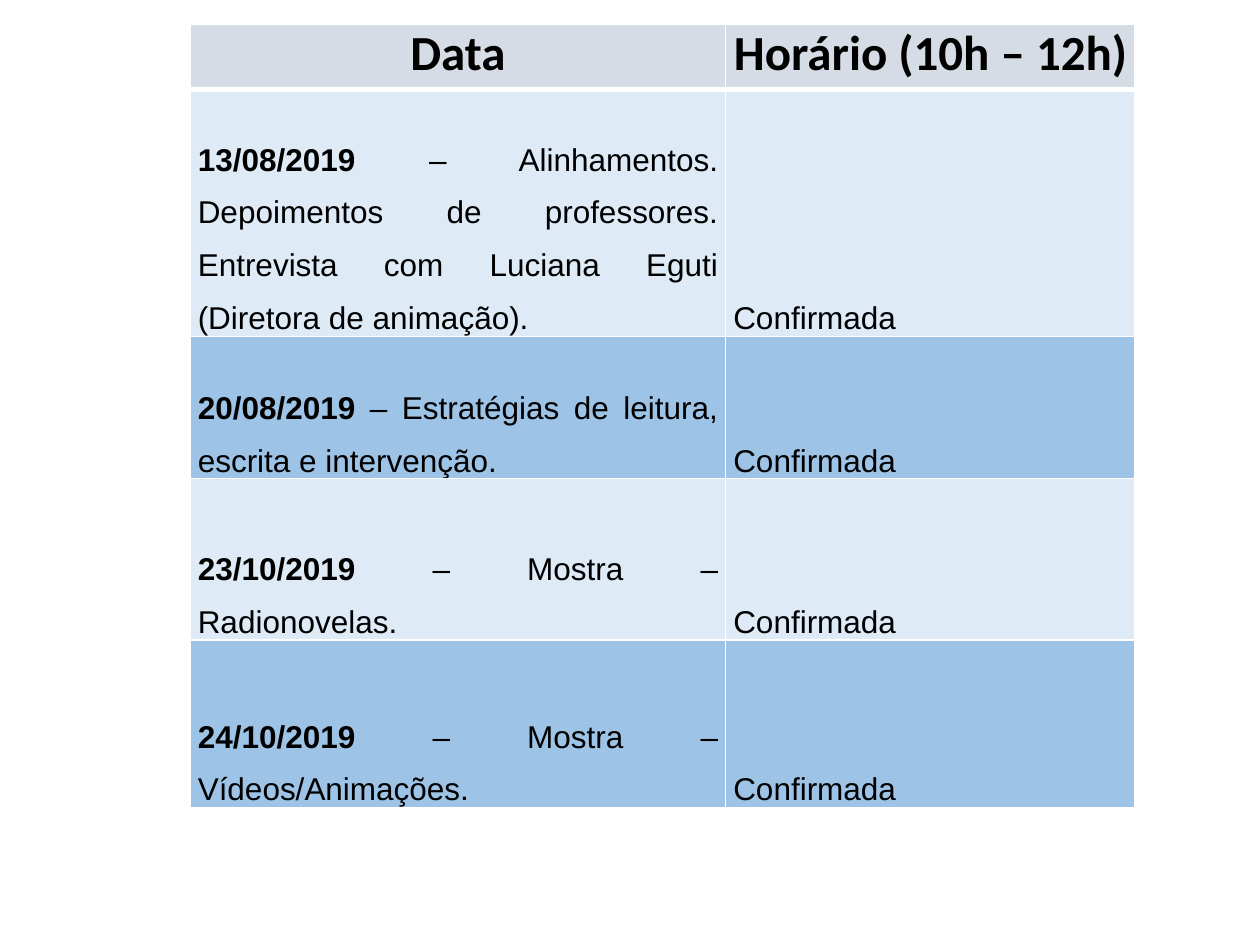
from dataclasses import dataclass

from lxml import etree
from pptx import Presentation
from pptx.dml.color import RGBColor
from pptx.enum.text import MSO_ANCHOR, PP_ALIGN
from pptx.oxml.ns import qn
from pptx.util import Inches, Pt

CENTER, JUSTIFY = PP_ALIGN.CENTER, PP_ALIGN.JUSTIFY
TOP, BOTTOM = MSO_ANCHOR.TOP, MSO_ANCHOR.BOTTOM


@dataclass(frozen=True)
class Theme:
    text: str = "000000"
    border: str = "FFFFFF"
    header_fill: str = "D6DCE5"
    light_fill: str = "DEEBF7"
    dark_fill: str = "9DC3E6"
    header_font: str = "Calibri"
    body_font: str = "Arial"
    header_size: int = 28
    body_size: int = 18
    thin: int = 1
    thick: int = 3


theme = Theme()


def set_borders(cell, top, bottom):
    widths = {"a:lnL": theme.thin, "a:lnR": theme.thin, "a:lnT": top, "a:lnB": bottom}
    properties = cell._tc.get_or_add_tcPr()
    for position, (side, width) in enumerate(widths.items()):
        line = etree.Element(qn(side), w=str(Pt(width)))
        fill = etree.SubElement(line, qn("a:solidFill"))
        etree.SubElement(fill, qn("a:srgbClr"), val=theme.border)
        properties.insert(position, line)


def fill_cell(cell, color, runs, font, size, alignment, spacing):
    cell.fill.solid()
    cell.fill.fore_color.rgb = RGBColor.from_string(color)
    cell.margin_left = cell.margin_right = Inches(0.06)
    cell.margin_bottom = Inches(0)
    paragraph = cell.text_frame.paragraphs[0]
    paragraph.alignment = alignment
    paragraph.line_spacing = spacing
    for text, bold in runs:
        run = paragraph.add_run()
        run.text = text
        run.font.name = font
        run.font.size = Pt(size)
        run.font.bold = bold
        run.font.color.rgb = RGBColor.from_string(theme.text)


headings = ["Data", "Horário (10h – 12h)"]
meetings = [
    ("13/08/2019", " – Alinhamentos. Depoimentos de professores. "
     "Entrevista com Luciana Eguti (Diretora de animação).", "Confirmada"),
    ("20/08/2019", " – Estratégias de leitura, escrita e intervenção.", "Confirmada"),
    ("23/10/2019", " – Mostra – Radionovelas.", "Confirmada"),
    ("24/10/2019", " – Mostra – Vídeos/Animações.", "Confirmada"),
]
column_widths = [4.25, 3.25]
row_heights = [0.52, 1.96, 1.13, 1.28, 1.33]

prs = Presentation()
prs.slide_width = Inches(10)
prs.slide_height = Inches(7.5)
slide = prs.slides.add_slide(prs.slide_layouts[6])

schedule = slide.shapes.add_table(
    len(row_heights), len(column_widths), Inches(1.51), Inches(0.19),
    Inches(sum(column_widths)), Inches(sum(row_heights))).table
for column, width in zip(schedule.columns, column_widths):
    column.width = Inches(width)
for row, height in zip(schedule.rows, row_heights):
    row.height = Inches(height)

for index, heading in enumerate(headings):
    cell = schedule.cell(0, index)
    fill_cell(cell, theme.header_fill, [(heading, True)], theme.header_font,
              theme.header_size, CENTER, 1.0)
    cell.margin_top = Inches(0)
    cell.vertical_anchor = TOP
    set_borders(cell, theme.thin, theme.thick)

for number, (date, activity, status) in enumerate(meetings, start=1):
    color = theme.light_fill if number % 2 else theme.dark_fill
    top = theme.thick if number == 1 else theme.thin
    for index, runs in enumerate([[(date, True), (activity, False)], [(status, False)]]):
        cell = schedule.cell(number, index)
        fill_cell(cell, color, runs, theme.body_font, theme.body_size, JUSTIFY, 1.5)
        cell.margin_top = Inches(0.01)
        cell.vertical_anchor = BOTTOM
        set_borders(cell, top, theme.thin)

prs.save("out.pptx")
